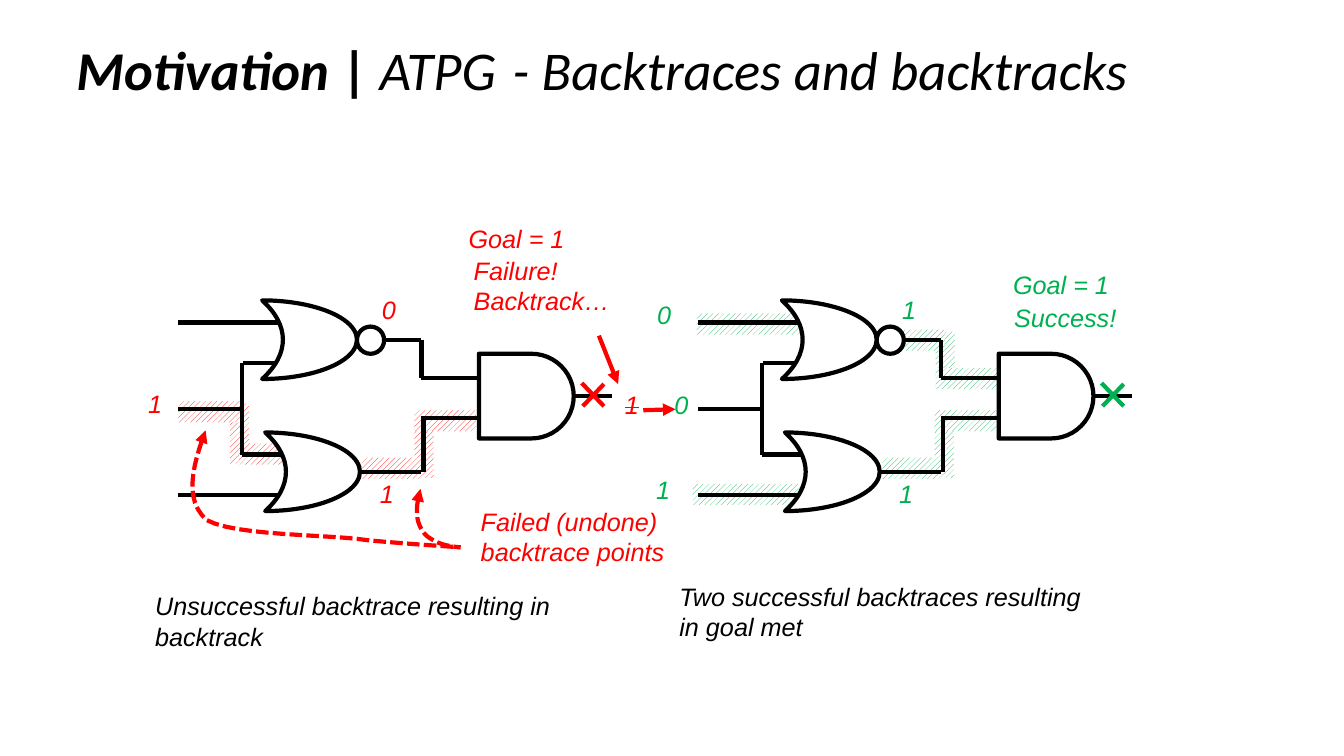
import pptx
import pptx.util
import pptx.dml.color
import pptx.enum.dml
import pptx.enum.shapes
import pptx.enum.text
import pptx.oxml
import pptx.oxml.ns

Inches = pptx.util.Inches
Pt = pptx.util.Pt
shade = pptx.dml.color.RGBColor.from_string
kinds = pptx.enum.shapes.MSO_SHAPE
BLACK, WHITE, RED, GREEN = "000000", "FFFFFF", "FF0000", "00B050"
STEP = 5.155

deck = pptx.Presentation()
deck.slide_width = Inches(13.33)
deck.slide_height = Inches(7.5)
slide = deck.slides.add_slide(deck.slide_layouts[6])
shapes = slide.shapes


def wire(x1, y1, x2, y2, color=BLACK, arrow=False):
    link = shapes.add_connector(
        pptx.enum.shapes.MSO_CONNECTOR.STRAIGHT,
        Inches(x1), Inches(y1), Inches(x2), Inches(y2))
    link.line.width = Pt(3)
    link.line.color.rgb = shade(color)
    props = link._element.spPr
    pptx.oxml.ns.qn("a:ln")
    if arrow:
        tip = link.line._get_or_add_ln().makeelement(
            pptx.oxml.ns.qn("a:tailEnd"), {"type": "triangle"})
        link.line._get_or_add_ln().append(tip)
    props.append(props.makeelement(pptx.oxml.ns.qn("a:effectLst"), {}))


def label(text, x, y, wide, high, color):
    box = shapes.add_textbox(Inches(x), Inches(y), Inches(wide), Inches(high))
    box.text_frame.word_wrap = True
    box.text_frame.text = text
    for run in box.text_frame.paragraphs[0].runs:
        run.font.size = Pt(18)
        run.font.name = "Arial"
        run.font.italic = True
        run.font.color.rgb = shade(color)
    return box


title = shapes.add_textbox(Inches(0.66), Inches(0.03), Inches(11.89), Inches(1.08))
title.text_frame.word_wrap = True
title.text_frame.vertical_anchor = pptx.enum.text.MSO_ANCHOR.BOTTOM
head = title.text_frame.paragraphs[0]
head.line_spacing = 0.9
for text, size, bold, slant in [
    ("Motivation", 39, True, True),
    (" | ", 39, True, False),
    ("ATPG", 39, False, True),
    (" ", 52.6, False, True),
    ("- Backtraces and backtracks", 39, False, True),
]:
    run = head.add_run()
    run.text = text
    run.font.size = Pt(size)
    run.font.name = "Calibri"
    run.font.bold = bold
    run.font.italic = slant
    run.font.color.rgb = shade(BLACK)

trails = {
    RED: [
        (4.11, 4.19, 0.19, 0.55), (2.28, 4, 0.19, 0.6),
        (4.11, 4.07, 0.61, 0.21), (3.59, 4.54, 0.61, 0.21),
        (1.77, 3.98, 0.61, 0.21), (2.37, 4.4, 0.43, 0.21),
    ],
    GREEN: [
        (9.28, 3.29, 0.19, 0.55), (9.28, 3.65, 0.61, 0.21),
        (8.76, 3.27, 0.61, 0.21), (6.91, 3.11, 1.08, 0.21),
        (6.87, 4.8, 1.08, 0.21), (9.27, 4.19, 0.19, 0.55),
        (9.27, 4.07, 0.61, 0.21), (8.75, 4.54, 0.61, 0.21),
    ],
}
wires = [
    (2.4, 4.51, 2.83, 4.51), (3.81, 3.37, 4.18, 3.37),
    (4.18, 3.75, 4.75, 3.75), (4.18, 4.15, 4.76, 4.15),
    (1.77, 3.2, 2.78, 3.2), (2.41, 3.6, 2.79, 3.6),
    (1.77, 4.91, 2.83, 4.91), (3.57, 4.68, 4.18, 4.68),
    (4.18, 3.37, 4.18, 3.75), (4.2, 4.13, 4.2, 4.68),
    (2.4, 3.6, 2.4, 4.51), (1.77, 4.06, 2.4, 4.06),
    (5.69, 3.93, 6.07, 3.93),
]
gates = [
    (kinds.ROUND_2_SAME_RECTANGLE, 4.8, 3.46, 0.84, 0.94, 90, [0.5, 0]),
    (kinds.OVAL, 3.54, 3.24, 0.27, 0.27, 0, []),
    (kinds.MOON, 2.6, 2.98, 0.94, 0.78, 180, [0.781]),
    (kinds.MOON, 2.63, 4.29, 0.94, 0.78, 180, [0.781]),
]

for shift, color in [(0, RED), (STEP, GREEN)]:
    for x, y, wide, high in trails[color]:
        trail = shapes.add_shape(
            kinds.RECTANGLE, Inches(x), Inches(y), Inches(wide), Inches(high))
        trail.shadow.inherit = False
        trail.line.fill.background()
        trail.fill.patterned()
        trail.fill.pattern = pptx.enum.dml.MSO_PATTERN.WIDE_UPWARD_DIAGONAL
        trail.fill.fore_color.rgb = shade(color)
        trail.fill.back_color.rgb = shade(WHITE)
    for x1, y1, x2, y2 in wires:
        wire(x1 + shift, y1, x2 + shift, y2)
    for kind, x, y, wide, high, turn, bends in gates:
        gate = shapes.add_shape(
            kind, Inches(x + shift), Inches(y), Inches(wide), Inches(high))
        gate.shadow.inherit = False
        gate.rotation = turn
        for spot, bend in enumerate(bends):
            gate.adjustments[spot] = bend
        gate.fill.solid()
        gate.fill.fore_color.rgb = shade(WHITE)
        gate.line.color.rgb = shade(BLACK)
        gate.line.width = Pt(3)
    wire(5.78 + shift, 4.03, 5.99 + shift, 3.81, color)
    wire(5.77 + shift, 3.8, 5.99 + shift, 4.03, color)

for text, x, y, color in [
    ("1", 3.67, 4.7, RED), ("1", 1.37, 3.8, RED), ("0", 3.69, 2.87, RED),
    ("1", 8.82, 4.7, GREEN), ("1", 8.85, 2.87, GREEN),
    ("1", 6.41, 4.66, GREEN), ("0", 6.42, 2.92, GREEN), ("0", 6.59, 3.81, GREEN),
]:
    label(text, x, y, 0.34, 0.4, color)
undone = label("1", 6.1, 3.81, 0.34, 0.4, RED)
undone.text_frame.paragraphs[0].runs[0].font._element.set("strike", "sngStrike")

for text, x, y, wide, high, color in [
    ("Goal = 1", 4.55, 2.17, 1.66, 0.4, RED),
    ("Failure!\vBacktrack…", 4.6, 2.48, 2.01, 0.71, RED),
    ("Failed (undone) backtrace points", 4.67, 4.97, 2.03, 0.71, RED),
    ("Goal = 1", 9.95, 2.62, 1.66, 0.4, GREEN),
    ("Success!", 9.96, 2.95, 2.01, 0.4, GREEN),
    ("Unsuccessful backtrace resulting in backtrack", 1.44, 5.81, 4.24, 0.71, BLACK),
    ("Two successful backtraces resulting in goal met", 6.64, 5.72, 4.24, 0.71, BLACK),
]:
    label(text, x, y, wide, high, color)

for knots in [
    [(2.04, 4.27), (1.9, 4.65), (1.83, 4.96), (2.05, 5.16), (2.34, 5.32),
     (3.26, 5.3), (3.65, 5.36), (4.07, 5.4), (4.57, 5.43), (4.57, 5.43)],
    [(4.17, 4.85), (4.14, 4.96), (4.12, 5.09), (4.15, 5.18), (4.18, 5.27),
     (4.22, 5.32), (4.3, 5.36), (4.36, 5.4), (4.46, 5.42), (4.56, 5.43)],
]:
    points = []
    for start in range(0, len(knots) - 1, 3):
        for tick in range(1, 13):
            t = tick / 12
            parts = [(1 - t) ** 3, 3 * t * (1 - t) ** 2, 3 * t * t * (1 - t), t ** 3]
            points.append(tuple(
                Inches(sum(part * knots[start + n][axis] for n, part in enumerate(parts)))
                for axis in (0, 1)))
    pen = shapes.build_freeform(Inches(knots[0][0]), Inches(knots[0][1]))
    pen.add_line_segments(points, close=False)
    curve = pen.convert_to_shape()
    curve.shadow.inherit = False
    curve.fill.background()
    curve.line.color.rgb = shade(RED)
    curve.line.width = Pt(3)
    curve.line.dash_style = pptx.enum.dml.MSO_LINE.SQUARE_DOT
    edge = curve.line._get_or_add_ln()
    edge.append(edge.makeelement(pptx.oxml.ns.qn("a:headEnd"), {"type": "triangle"}))

wire(5.94, 3.33, 6.13, 3.81, RED, True)
wire(6.38, 4.07, 6.7, 4.06, RED, True)

deck.save("out.pptx")
